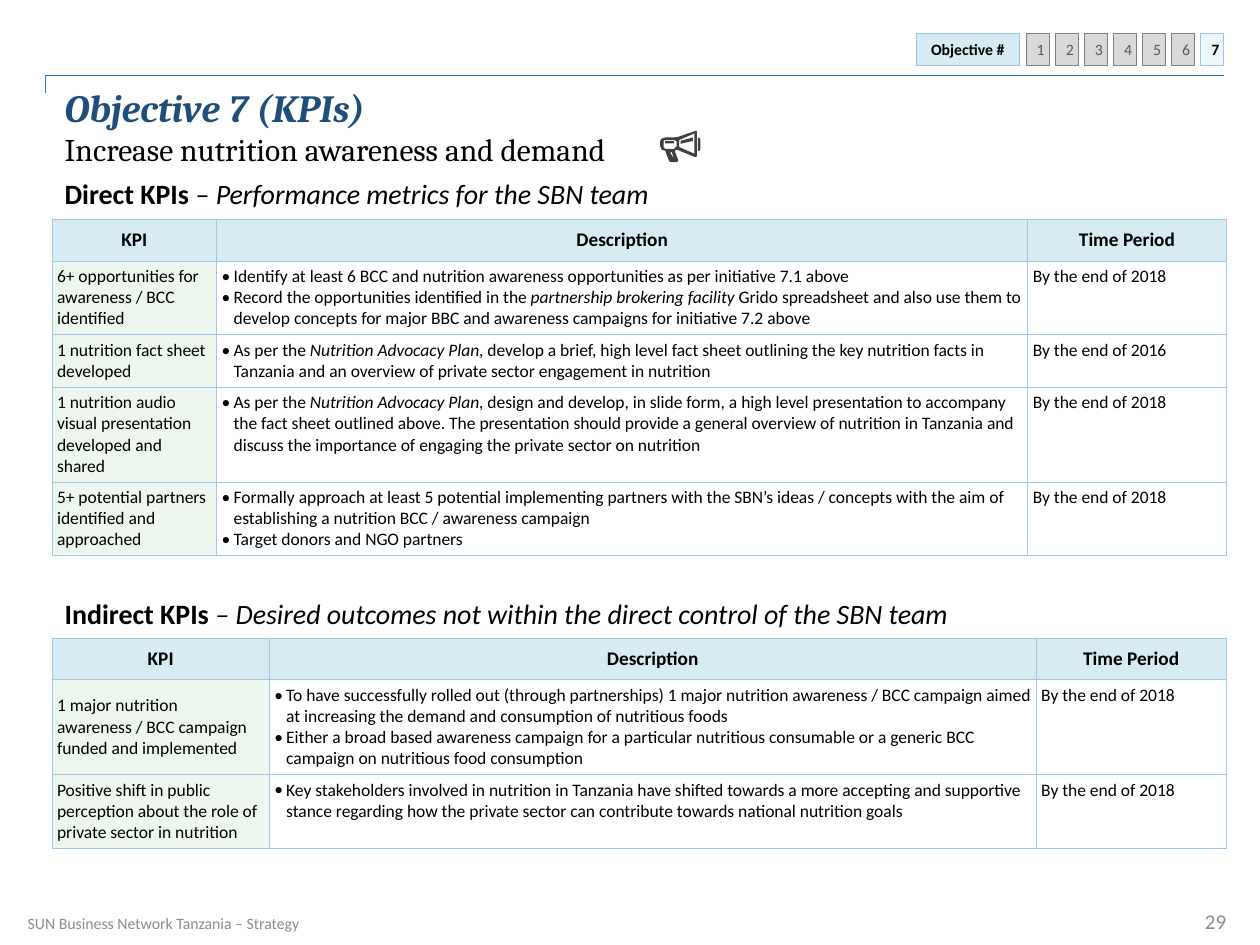
"""Builds the Objective 7 KPI slide of a nutrition strategy."""
from dataclasses import dataclass

from lxml import etree
from pptx import Presentation, util as u
from pptx.dml.color import RGBColor
from pptx.enum import shapes, text
from pptx.oxml import ns


@dataclass(frozen=True)
class Style:
    """Describes the type of a paragraph."""
    size: int
    color: str = "000000"
    bold: bool = False
    italic: bool = False
    font: str = "Calibri"


class Theme:
    """Holds the colours and type styles of the slide."""
    HEADER, KPI, PLAIN = "D6EBF2", "EDF6EF", "FFFFFF"
    ACTIVE, IDLE, IDLE_LINE, ACTIVE_LINE = "EDF6F9", "D9D9D9", "808080", "9DC3E6"
    BORDER, RULE, ICON = "A3C7E7", "2E75B6", "404040"
    TITLE = Style(22, "1F4E79", True, True, "Cambria")
    SUBTITLE = Style(18, font="Cambria")
    HEADING, HEAD_CELL, CELL = Style(16), Style(11, bold=True), Style(10)
    BADGE, BADGE_IDLE = Style(9, bold=True), Style(9, "595959")
    FOOTER, PAGE = Style(9, "8C8C8C"), Style(12, "8C8C8C")


LEFT, MIDDLE = text.PP_ALIGN.LEFT, text.MSO_ANCHOR.MIDDLE
CENTER, RIGHT = text.PP_ALIGN.CENTER, text.PP_ALIGN.RIGHT
TOP = text.MSO_ANCHOR.TOP
HEADERS = ("KPI", "Description", "Time Period")
DIRECT = [
    (3, "6+ opportunities for awareness / BCC identified",
     ["Identify at least 6 BCC and nutrition awareness opportunities as per initiative 7.1 above",
      "Record the opportunities identified in the *partnership brokering facility* Grido spreadsheet and also "
      "use them to develop concepts for major BBC and awareness campaigns for initiative 7.2 above"],
     "By the end of 2018"),
    (2, "1 nutrition fact sheet developed",
     ["As per the *Nutrition Advocacy Plan*, develop a brief, high level fact sheet outlining the key nutrition "
      "facts in Tanzania and an overview of private sector engagement in nutrition"],
     "By the end of 2016"),
    (4, "1 nutrition audio visual presentation developed and shared",
     ["As per the *Nutrition Advocacy Plan,* design and develop, in slide form, a high level presentation to "
      "accompany the fact sheet outlined above. The presentation should provide a general overview of nutrition "
      "in Tanzania and discuss the importance of engaging the private sector on nutrition"],
     "By the end of 2018"),
    (3, "5+ potential partners identified and approached",
     ["Formally approach at least 5 potential implementing partners with the SBN’s ideas / concepts with the aim "
      "of establishing a nutrition BCC / awareness campaign",
      "Target donors and NGO partners"],
     "By the end of 2018"),
]
INDIRECT = [
    (4, "1 major nutrition awareness / BCC campaign funded and implemented",
     ["To have successfully rolled out (through partnerships) 1 major nutrition awareness / BCC campaign aimed "
      "at increasing the demand and consumption of nutritious foods",
      "Either a broad based awareness campaign for a particular nutritious consumable or a generic BCC campaign "
      "on nutritious food consumption"],
     "By the end of 2018"),
    (3, "Positive shift in public perception about the role of private sector in nutrition",
     ["Key stakeholders involved in nutrition in Tanzania have shifted towards a more accepting and supportive "
      "stance regarding how the private sector can contribute towards national nutrition goals"],
     "By the end of 2018"),
]
MEGAPHONE = [
    [(1405, 264), (1402, 264), (1367, 276), (1359, 277), (1341, 277), (1333, 280), (1331, 285), (1331, 295),
     (1334, 302), (1341, 304), (1349, 325), (1352, 327), (1364, 327), (1367, 325), (1367, 322), (1360, 304),
     (1365, 302), (1402, 317), (1405, 315)],
    [(1359, 320), (1351, 308), (1354, 306)],
    [(1341, 282), (1359, 282), (1364, 285), (1364, 295), (1359, 300), (1341, 300), (1338, 297), (1338, 284)],
    [(1400, 310), (1370, 297), (1369, 295), (1369, 284), (1370, 282), (1400, 269)],
]
STRIPE = [[(1397, 277), (1372, 284), (1372, 290), (1397, 284)]]
SOUND = [[(1407, 277), (1411, 279), (1412, 281), (1412, 300), (1411, 303), (1407, 305)]]


def cm(*lengths):
    """Converts centimetres to slide lengths."""
    return [u.Cm(length) for length in lengths]


def paint(fill, color):
    """Sets a solid fill."""
    fill.solid()
    fill.fore_color.rgb = RGBColor.from_string(color)


def write(paragraph, words, style, align=LEFT):
    """Writes a paragraph, with *italic* and _bold_ parts marked."""
    paragraph.alignment = align
    paragraph.space_before = u.Pt(0)
    font = paragraph.font
    font.name, font.size = style.font, u.Pt(style.size)
    font.bold, font.italic = style.bold, style.italic
    font.color.rgb = RGBColor.from_string(style.color)
    for i, part in enumerate(words.split("*")):
        for j, piece in enumerate(part.split("_")):
            if piece:
                run = paragraph.add_run()
                run.text = piece
                if i % 2:
                    run.font.italic = True
                if j % 2:
                    run.font.bold = True


def place(box, left, top, width, height, anchor=MIDDLE):
    """Moves a text shape and settles how its text is held."""
    box.left, box.top, box.width, box.height = cm(left, top, width, height)
    frame = box.text_frame
    frame.auto_size, frame.word_wrap = text.MSO_AUTO_SIZE.NONE, True
    frame.vertical_anchor = anchor
    return frame


def add_caption(slide, box, words, style, align):
    """Adds a footer text."""
    frame = place(slide.shapes.add_textbox(*cm(*box)), *box)
    write(frame.paragraphs[0], words, style, align)


def add_badge(slide, left, width, words, fill, line, style, inset=0):
    """Adds one box of the objective tracker."""
    badge = slide.shapes.add_shape(shapes.MSO_SHAPE.RECTANGLE, *cm(left, 0.67, width, 0.65))
    badge.shadow.inherit = False
    paint(badge.fill, fill)
    paint(badge.line.fill, line)
    badge.line.width = u.Pt(0.5)
    frame = badge.text_frame
    frame.margin_left, frame.margin_right = cm(inset, 0)
    frame.vertical_anchor = MIDDLE
    write(frame.paragraphs[0], words, style, CENTER)


def add_tracker(slide):
    """Adds the objective label and its seven numbered boxes."""
    add_badge(slide, 18.47, 2.08, "Objective #", Theme.HEADER, Theme.ACTIVE_LINE, Theme.BADGE)
    first, last, count = 20.69, 24.21, 7
    for i in range(count):
        look = ((Theme.ACTIVE, Theme.ACTIVE_LINE, Theme.BADGE) if i == count - 1
                else (Theme.IDLE, Theme.IDLE_LINE, Theme.BADGE_IDLE))
        add_badge(slide, first + i * (last - first) / (count - 1), 0.46, str(i + 1), *look, inset=0.12)


def add_rule(slide):
    """Adds the bent line above the title."""
    rule = slide.shapes.add_connector(shapes.MSO_CONNECTOR.ELBOW, *cm(0.91, 1.88, 24.67, 1.52))
    rule.line.color.rgb = RGBColor.from_string(Theme.RULE)
    rule.line.width = u.Pt(0.5)
    properties = rule._element.spPr
    guides = properties.find(ns.qn("a:prstGeom")).get_or_add_avLst()
    etree.SubElement(guides, ns.qn("a:gd"), name="adj1", fmla="val 0")
    etree.SubElement(properties, ns.qn("a:effectLst"))


def add_megaphone(slide):
    """Adds the grouped megaphone icon."""
    icon = slide.shapes.add_group_shape().shapes
    parts = [icon.add_shape(shapes.MSO_SHAPE.RECTANGLE, *cm(13.41, 2.84, 0.18, 0.05))]
    for contours in (SOUND, MEGAPHONE, STRIPE):
        builder = icon.build_freeform(*contours[0][0], scale=u.Cm(0.01))
        for i, (start, *rest) in enumerate(contours):
            if i:
                builder.move_to(*start)
            builder.add_line_segments(rest, close=True)
        parts.append(builder.convert_to_shape())
    for part in parts:
        part.shadow.inherit = False
        paint(part.fill, Theme.ICON)
        part.line.fill.background()


def style_cell(cell, fill, anchor, inset=None):
    """Sets the fill, borders, anchor and insets of a cell."""
    paint(cell.fill, fill)
    cell.vertical_anchor = anchor
    if inset is not None:
        cell.margin_left = cell.margin_right = cell.margin_top = cell.margin_bottom = u.Cm(inset)
    properties = cell._tc.get_or_add_tcPr()
    for i, side in enumerate("LRTB"):
        border = etree.Element(ns.qn(f"a:ln{side}"), w=str(u.Pt(0.5)))
        solid = etree.SubElement(border, ns.qn("a:solidFill"))
        etree.SubElement(solid, ns.qn("a:srgbClr"), val=Theme.BORDER)
        properties.insert(i, border)


def write_bullets(frame, items):
    """Fills a cell with a bulleted list."""
    for i, item in enumerate(items):
        paragraph = frame.add_paragraph() if i else frame.paragraphs[0]
        write(paragraph, item, Theme.CELL)
        properties = paragraph._p.get_or_add_pPr()
        properties.set("marL", str(u.Cm(0.24)))
        properties.set("indent", str(-u.Cm(0.24)))
        defaults = properties.find(ns.qn("a:defRPr"))
        defaults.addprevious(etree.Element(ns.qn("a:buFont"), typeface=Theme.CELL.font))
        defaults.addprevious(etree.Element(ns.qn("a:buChar"), char="•"))


def add_kpi_table(slide, top, widths, kpis):
    """Adds a table of KPIs, descriptions and time periods."""
    heights = [0.84] + [0.42 * lines + 0.21 for lines, *_ in kpis]
    frame = slide.shapes.add_table(len(heights), len(widths), *cm(1.05, top, sum(widths), sum(heights)))
    table = frame.table
    table.first_row = table.horz_banding = False
    for column, width in zip(table.columns, widths):
        column.width = u.Cm(width)
    for row, height in zip(table.rows, heights):
        row.height = u.Cm(height)
    for cell, header in zip(table.rows[0].cells, HEADERS):
        style_cell(cell, Theme.HEADER, MIDDLE)
        write(cell.text_frame.paragraphs[0], header, Theme.HEAD_CELL, CENTER)
    for i, (_, name, description, period) in enumerate(kpis, 1):
        kpi, details, due = table.rows[i].cells
        style_cell(kpi, Theme.KPI, MIDDLE, 0.1)
        write(kpi.text_frame.paragraphs[0], name, Theme.CELL)
        style_cell(details, Theme.PLAIN, TOP, 0.1)
        write_bullets(details.text_frame, description)
        style_cell(due, Theme.PLAIN, TOP, 0.1)
        write(due.text_frame.paragraphs[0], period, Theme.CELL)


def main():
    """Builds and saves the slide."""
    deck = Presentation()
    deck.slide_width, deck.slide_height = cm(25.4, 19.05)
    slide = deck.slides.add_slide(deck.slide_layouts.get_by_name("Comparison"))
    holders = {holder.placeholder_format.idx: holder for holder in slide.placeholders}
    for unused in (2, 4):
        holders[unused].element.getparent().remove(holders[unused].element)
    add_caption(slide, (0.31, 18.11, 8.59, 1.02), "SUN Business Network Tanzania – Strategy", Theme.FOOTER, LEFT)
    add_caption(slide, (19.25, 18.06, 5.72, 1.02), "29", Theme.PAGE, RIGHT)
    title = place(slide.shapes.title, 1.05, 1.56, 23.77, 1.83, TOP)
    write(title.paragraphs[0], "Objective 7 (KPIs)", Theme.TITLE)
    write(title.add_paragraph(), "Increase nutrition awareness and demand", Theme.SUBTITLE)
    direct = place(holders[1], 1.05, 3.4, 15.47, 1)
    write(direct.paragraphs[0], "_Direct KPIs _– *Performance metrics for the SBN team*", Theme.HEADING)
    indirect = place(holders[3], 1.05, 11.86, 22.4, 1)
    write(indirect.paragraphs[0], "_Indirect KPIs _*– Desired outcomes not within the direct control of the SBN team*",
          Theme.HEADING)
    add_rule(slide)
    add_kpi_table(slide, 4.42, (3.32, 16.35, 4), DIRECT)
    add_kpi_table(slide, 12.86, (4.38, 15.46, 3.83), INDIRECT)
    add_megaphone(slide)
    add_tracker(slide)
    deck.save("out.pptx")


if __name__ == "__main__":
    main()
